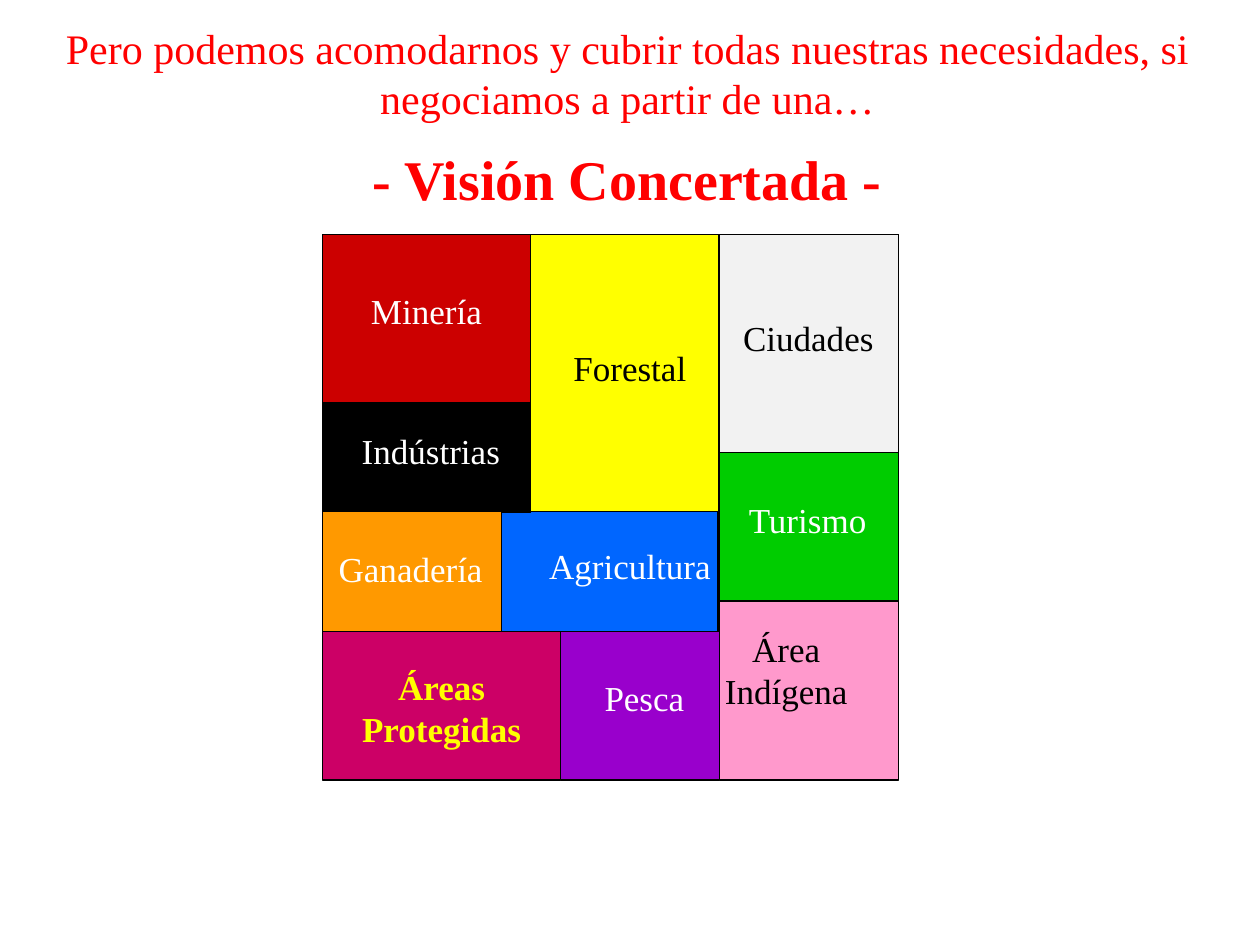
from dataclasses import dataclass

from pptx import Presentation
from pptx.dml.color import RGBColor
from pptx.enum.shapes import MSO_SHAPE
from pptx.enum.text import PP_ALIGN
from pptx.util import Inches, Pt

RECTANGLE = MSO_SHAPE.RECTANGLE
CENTER = PP_ALIGN.CENTER


@dataclass(frozen=True)
class Theme:
    font: str = "Times New Roman"
    intro_size: int = 24
    heading_size: int = 32
    label_size: int = 20
    line_width: float = 0.75
    white: str = "FFFFFF"
    black: str = "000000"
    red: str = "FF0000"
    yellow: str = "FFFF00"


THEME = Theme()

# Land map: left, top, width, height in inches
MAP_BOX = (2.56, 1.86, 4.57, 4.33)

# Tiles: lines of text, fill, text colour, bold,
# box relative to the map, label box (left, top, width) relative to the tile
TILES = [
    (["Minería"], "CC0000", THEME.white, False,
     (0, 0, 1.65, 1.34), (-0.16, 0.39, 1.97)),
    (["Agricultura"], "0066FF", THEME.white, False,
     (1.41, 2.2, 1.73, 0.95), (-0.07, 0.21, 2.2)),
    (["Áreas Protegidas"], "CC0066", THEME.yellow, True,
     (0, 3.15, 1.89, 1.18), (-0.08, 0.22, 2.05)),
    (["Área", "Indígena"], "FF99CC", THEME.black, False,
     (3.15, 2.91, 1.42, 1.42), (-0.32, 0.16, 2.05)),
    (["Ciudades"], "F2F2F2", THEME.black, False,
     (3.15, 0, 1.42, 1.73), (-0.32, 0.6, 2.05)),
    (["Indústrias"], THEME.black, THEME.white, False,
     (0, 1.34, 1.65, 0.87), (-0.24, 0.16, 2.2)),
    (["Turismo"], "00CC00", THEME.white, False,
     (3.15, 1.73, 1.42, 1.18), (-0.4, 0.32, 2.2)),
    (["Forestal"], THEME.yellow, THEME.black, False,
     (1.65, 0, 1.49, 2.2), (-0.31, 0.84, 2.2)),
    (["Ganadería"], "FF9900", THEME.white, False,
     (0, 2.2, 1.42, 0.95), (-0.4, 0.24, 2.2)),
    (["Pesca"], "9900CC", THEME.white, False,
     (1.89, 3.15, 1.26, 1.18), (-0.32, 0.31, 1.97)),
]
LINE_HEIGHT = 0.33
LABEL_PADDING = 0.11
FIRST_LINE_INDENT = 0.35  # right indent that moves the first of two lines left


def add_rectangle(shapes, box, fill):
    rectangle = shapes.add_shape(RECTANGLE, *map(Inches, box))
    rectangle.shadow.inherit = False
    rectangle.fill.solid()
    rectangle.fill.fore_color.rgb = RGBColor.from_string(fill)
    rectangle.line.color.rgb = RGBColor.from_string(THEME.black)
    rectangle.line.width = Pt(THEME.line_width)


def add_text(shapes, box, lines, color):
    """Add centred paragraphs; each line is (text, size, bold)."""
    frame = shapes.add_textbox(*map(Inches, box)).text_frame
    frame.word_wrap = True
    frame.text = "\n".join(text for text, _, _ in lines)
    for para, (_, size, bold) in zip(frame.paragraphs, lines):
        para.alignment = CENTER
        for span in para.runs:
            span.font.name = THEME.font
            span.font.size = Pt(size)
            span.font.bold = bold
            span.font.color.rgb = RGBColor.from_string(color)
    return frame


def add_title(page, box):
    frame = add_text(page.shapes, box, [
        ("Pero podemos acomodarnos y cubrir todas nuestras necesidades, "
         "si negociamos a partir de una…", THEME.intro_size, False),
        ("- Visión Concertada -", THEME.heading_size, True),
    ], THEME.red)
    for para in frame.paragraphs:
        para.space_before = Pt(12)


def add_tile(page, box, label_box, texts, fill, color, bold):
    shapes = page.shapes.add_group_shape().shapes
    add_rectangle(shapes, box, fill)
    left, top, width = label_box
    line_count = max(len(text.split()) for text in texts + [" ".join(texts)])
    height = LABEL_PADDING + line_count * LINE_HEIGHT
    frame = add_text(shapes, (box[0] + left, box[1] + top, width, height),
                     [(text, THEME.label_size, bold) for text in texts], color)
    if len(texts) > 1:
        properties = frame.paragraphs[0]._p.get_or_add_pPr()
        properties.set("marR", str(Inches(FIRST_LINE_INDENT)))


def add_land_map(page, box):
    add_rectangle(page.shapes, box, THEME.white)
    for texts, fill, color, bold, (left, top, width, height), label in TILES:
        tile_box = (box[0] + left, box[1] + top, width, height)
        add_tile(page, tile_box, label, texts, fill, color, bold)


def main():
    deck = Presentation()
    deck.slide_width, deck.slide_height = Inches(10), Inches(7.5)
    page = deck.slides.add_slide(deck.slide_layouts[6])
    add_land_map(page, MAP_BOX)
    add_title(page, (-0.02, 0.13, 10, 1.62))
    deck.save("out.pptx")


if __name__ == "__main__":
    main()
